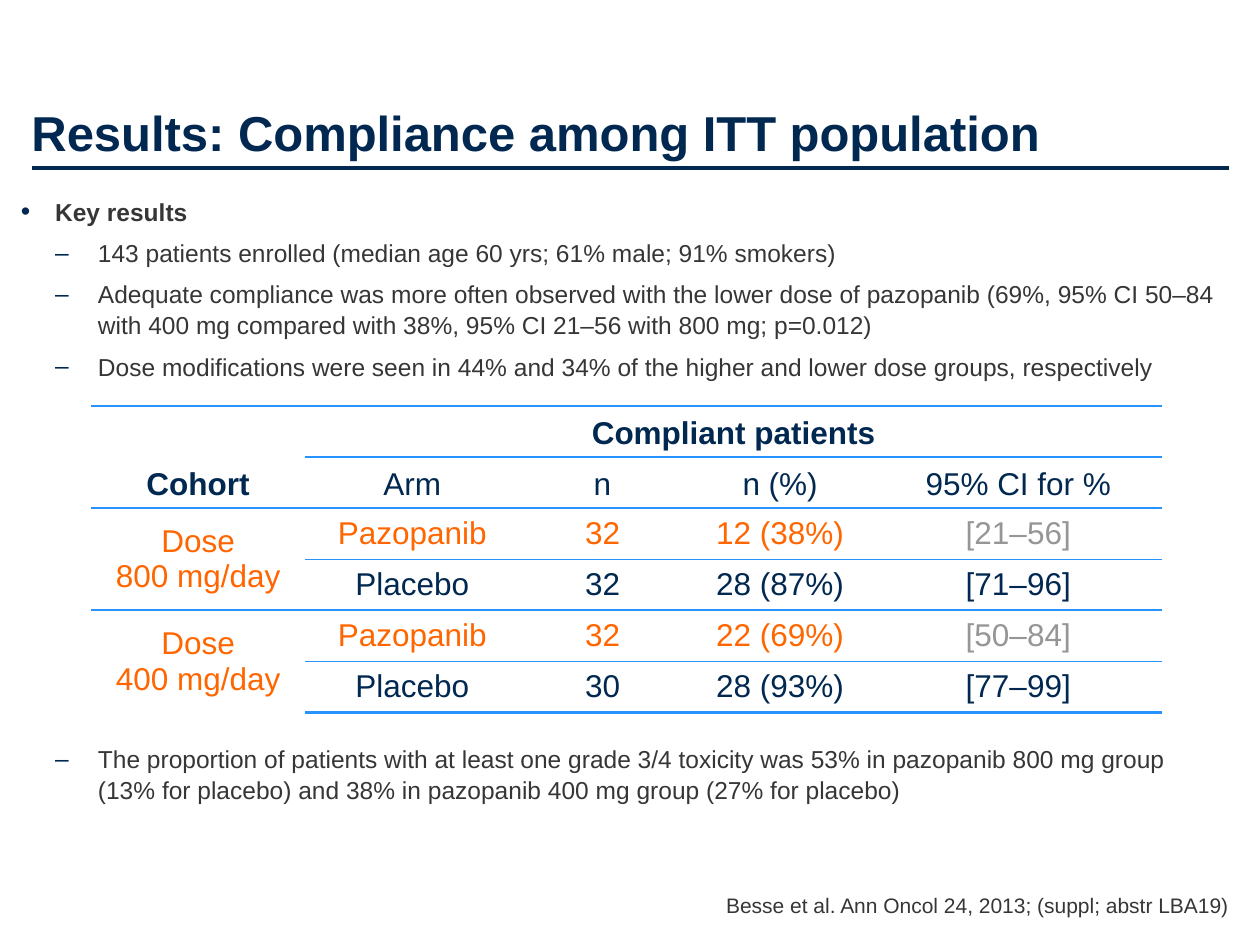
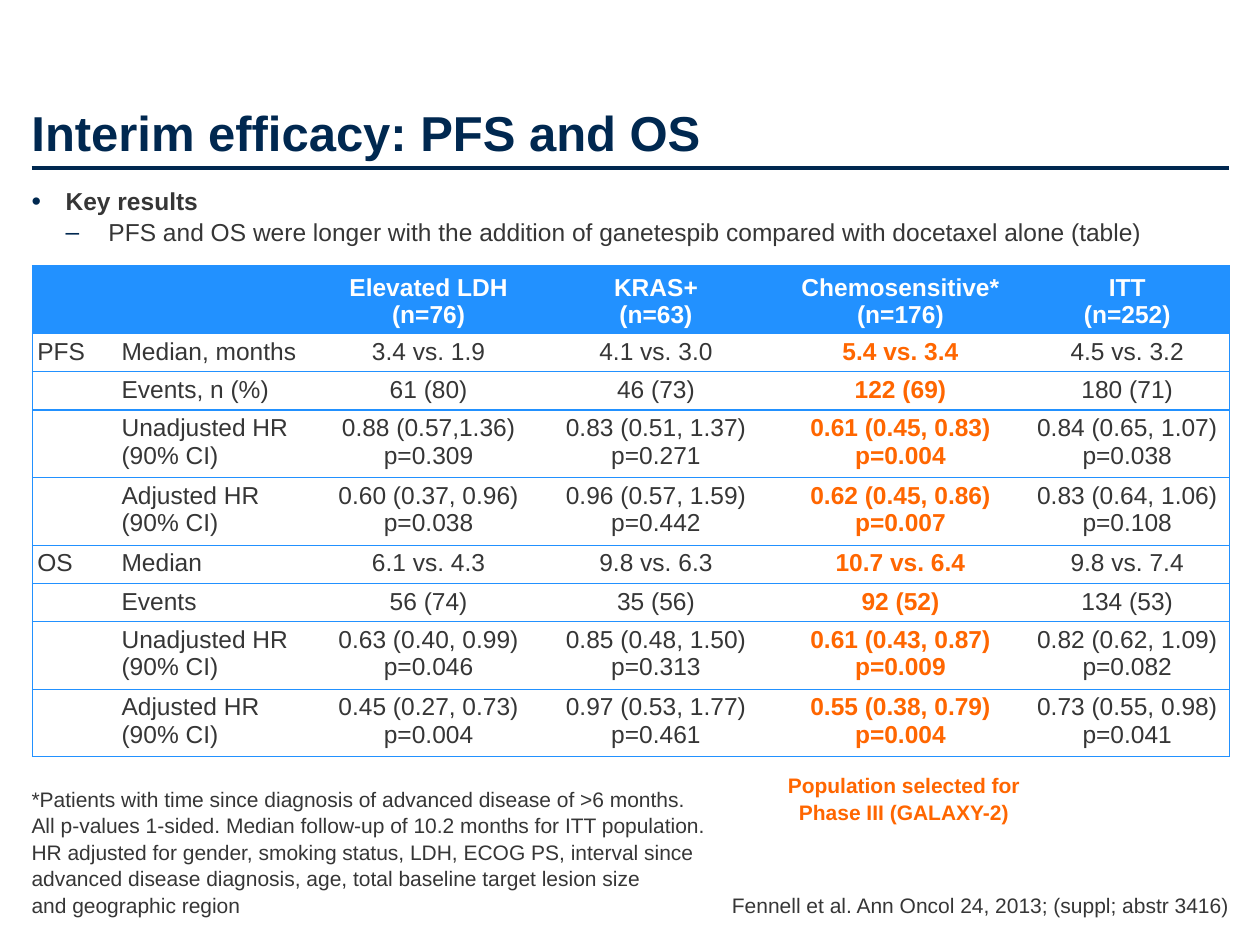
from lxml.etree import SubElement as Sub
from pptx import Presentation as Deck
from pptx.dml.color import RGBColor as Rgb
from pptx.enum.text import MSO_ANCHOR as Anchor, PP_ALIGN as Align
from pptx.oxml.ns import qn
from pptx.util import Pt

NAVY, GREY, ORANGE, PALE, WHITE = "002850", "363636", "FF6600", "969696", "FFFFFF"
SKY, BLUE = "2893FF", "2291FF"
PLAIN = "{2D5ABB26-0587-4C30-8999-92F81FD0307C}"


def hue(code):
    return Rgb.from_string(code)


class Page:
    base = {"name": "Arial", "size": Pt(14), "bold": False, "color": GREY}
    marks = [("•", 19.5, 19.5, True), ("–", 44, 24.5, False)]

    def __init__(self, deck, title, source):
        self.slide = deck.slides.add_slide(deck.slide_layouts[6])
        self.text((18, 18, 684, 74.2), [title], size=Pt(28), bold=True, color=NAVY)
        self.rule(18, 96, 702)
        self.text((382, 504, 320.4, 20.2), [source], Align.RIGHT, size=Pt(12))

    def rule(self, left, top, right):
        line = self.slide.shapes.add_connector(1, *map(Pt, (left, top, right, top)))
        line.line.color.rgb = hue(NAVY)
        line.line.width = Pt(2.25)
        Sub(line._element.spPr, qn("a:effectLst"))

    def put(self, para, text, align=Align.LEFT, **look):
        look = {**self.base, **look}
        para.alignment = align
        if not text:
            Sub(para._p, qn("a:endParaRPr"), sz=str(int(look["size"].pt * 100)))
            return
        run = para.add_run()
        run.text = text
        run.font.color.rgb = hue(look.pop("color"))
        for key, val in look.items():
            setattr(run.font, key, val)

    def frame(self, spot, anchor, pad=0):
        frame = self.slide.shapes.add_textbox(*map(Pt, spot)).text_frame
        form = {"word_wrap": True, "vertical_anchor": anchor, "margin_left": 0,
                "margin_right": 0, "margin_top": Pt(pad), "margin_bottom": Pt(pad)}
        for key, val in form.items():
            setattr(frame, key, val)
        return frame

    def fill(self, frame, lines, align, **look):
        for i, line in enumerate(lines):
            para = frame.add_paragraph() if i else frame.paragraphs[0]
            self.put(para, line, align, **look)

    def text(self, spot, lines, align=Align.LEFT, **look):
        frame = self.frame(spot, Anchor.BOTTOM)
        self.fill(frame, lines, align, **look)
        for para in frame.paragraphs:
            para.line_spacing = 1.05

    def list(self, spot, items, gap=0):
        frame = self.frame(spot, Anchor.TOP, 3.6)
        for i, (level, item) in enumerate(items):
            mark, left, hang, bold = self.marks[level]
            para = frame.add_paragraph() if i else frame.paragraphs[0]
            self.put(para, item, bold=bold)
            para.level = level
            para.line_spacing = 1.05
            para.space_after = Pt(gap)
            props = para._p.get_or_add_pPr()
            props.set("marL", str(Pt(left)))
            props.set("indent", str(-Pt(hang)))
            Sub(Sub(props, qn("a:buClr")), qn("a:srgbClr"), val=NAVY)
            Sub(props, qn("a:buSzPct"), val="100000" if level else "110000")
            Sub(props, qn("a:buFont"), typeface="Arial")
            Sub(props, qn("a:buChar"), char=mark)

    def edge(self, cell, color, sides):
        props = cell._tc.get_or_add_tcPr()
        for side in "LRTB":
            if sides.get(side):
                line = Sub(props, qn("a:ln" + side), w=str(Pt(sides[side])))
                Sub(Sub(line, qn("a:solidFill")), qn("a:srgbClr"), val=color)

    def table(self, left, top, cols, rows, data, style, sides, line, pad, spans=()):
        spot = map(Pt, (left, top, sum(cols), sum(rows)))
        table = self.slide.shapes.add_table(len(rows), len(cols), *spot).table
        table.first_row = table.horz_banding = False
        table._tbl.tblPr.find(qn("a:tableStyleId")).text = PLAIN
        for col, wide in zip(table.columns, cols):
            col.width = Pt(wide)
        for row, high in zip(table.rows, rows):
            row.height = Pt(high)
        for r, c, down, right in spans:
            table.cell(r, c).merge(table.cell(r + down, c + right))
        for r, row in enumerate(data):
            for c, text in enumerate(row):
                cell = table.cell(r, c)
                look = style(r, c)
                cell.vertical_anchor = look.pop("anchor")
                cell.margin_left = cell.margin_right = Pt(pad[0])
                cell.margin_top = cell.margin_bottom = Pt(pad[1])
                self.edge(cell, line, sides(r, c))
                back = look.pop("back", None)
                if back:
                    cell.fill.solid()
                    cell.fill.fore_color.rgb = hue(back)
                else:
                    cell.fill.background()
                self.fill(cell.text_frame, text.split("\n"), **look)


def doses(deck):
    page = Page(deck, "Results: Compliance among ITT population",
                "Besse et al. Ann Oncol 24, 2013; (suppl; abstr LBA19)")
    page.list((12, 108, 690, 115), [
        (0, "Key results"),
        (1, "143 patients enrolled (median age 60 yrs; 61% male; 91% smokers)"),
        (1, "Adequate compliance was more often observed with the lower dose of pazopanib "
            "(69%, 95% CI 50–84 with 400 mg compared with 38%, 95% CI 21–56 with 800 mg; "
            "p=0.012)"),
        (1, "Dose modifications were seen in 44% and 34% of the higher and lower dose "
            "groups, respectively"),
    ], 6)
    page.list((12, 421, 690, 55), [
        (1, "The proportion of patients with at least one grade 3/4 toxicity was 53% in "
            "pazopanib 800 mg group (13% for placebo) and 38% in pazopanib 400 mg group "
            "(27% for placebo)"),
    ], 6)
    data = [
        ["Cohort", "Compliant patients", "", "", ""],
        ["", "Arm", "n", "n (%)", "95% CI for %"],
        ["Dose\n800 mg/day", "Pazopanib", "32", "12 (38%)", "[21–56]"],
        ["", "Placebo", "32", "28 (87%)", "[71–96]"],
        ["Dose\n400 mg/day", "Pazopanib", "32", "22 (69%)", "[50–84]"],
        ["", "Placebo", "30", "28 (93%)", "[77–99]"],
    ]
    lines = [1.5, 1.5, 1.5, 0.25, 1.5, 0.25, 1.5]

    def style(r, c):
        drug = r in (2, 4)
        color = NAVY if not drug else PALE if c == 4 else ORANGE
        return {"anchor": Anchor.BOTTOM if r < 2 else Anchor.MIDDLE, "align": Align.CENTER,
                "size": Pt(18), "bold": r == 0, "color": color}

    def sides(r, c):
        inner = {1, 3, 5} if c == 0 else set()
        return {side: lines[n] for side, n in (("T", r), ("B", r + 1)) if n not in inner}

    page.table(52, 232, [122.4, 122.4, 95, 108, 164.2], [29.2] * 6, data, style, sides,
               SKY, (7.2, 3.6), [(0, 0, 1, 0), (0, 1, 0, 3), (2, 0, 1, 0), (4, 0, 1, 0)])


def trial(deck):
    page = Page(deck, "Interim efficacy: PFS and OS",
                "Fennell et al. Ann Oncol 24, 2013; (suppl; abstr 3416)")
    data = [
        ["", "", "Elevated LDH\n(n=76)", "KRAS+\n(n=63)", "Chemosensitive*\n(n=176)",
         "ITT\n(n=252)"],
        ["PFS", "Median, months", "3.4 vs. 1.9", "4.1 vs. 3.0", "5.4 vs. 3.4", "4.5 vs. 3.2"],
        ["", "Events, n (%)", "61 (80)", "46 (73)", "122 (69)", "180 (71)"],
        ["", "Unadjusted HR (90% CI)", "0.88 (0.57,1.36)\np=0.309",
         "0.83 (0.51, 1.37)\np=0.271", "0.61 (0.45, 0.83)\np=0.004",
         "0.84 (0.65, 1.07)\np=0.038"],
        ["", "Adjusted HR (90% CI)", "0.60 (0.37, 0.96)\np=0.038",
         "0.96 (0.57, 1.59)\np=0.442", "0.62 (0.45, 0.86)\np=0.007",
         "0.83 (0.64, 1.06)\np=0.108"],
        ["OS", "Median", "6.1 vs. 4.3", "9.8 vs. 6.3", "10.7 vs. 6.4", "9.8 vs. 7.4"],
        ["", "Events", "56 (74)", "35 (56)", "92 (52)", "134 (53)"],
        ["", "Unadjusted HR (90% CI)", "0.63 (0.40, 0.99)\np=0.046",
         "0.85 (0.48, 1.50)\np=0.313", "0.61 (0.43, 0.87)\np=0.009",
         "0.82 (0.62, 1.09)\np=0.082"],
        ["", "Adjusted HR (90% CI)", "0.45 (0.27, 0.73)\np=0.004",
         "0.97 (0.53, 1.77)\np=0.461", "0.55 (0.38, 0.79)\np=0.004",
         "0.73 (0.55, 0.98)\np=0.041"],
    ]
    tall, low = 37.2, 21.4

    def style(r, c):
        look = {"anchor": Anchor.TOP, "align": Align.CENTER if c > 1 else Align.LEFT}
        if r == 0:
            look.update(anchor=Anchor.BOTTOM, bold=True, color=WHITE, back=BLUE)
        elif c == 4:
            look.update(bold=True, color=ORANGE)
        return look

    def sides(r, c):
        return {"T": 0.75, "B": 0.75, "L": 0.75 * (c == 0), "R": 0.75 * (c == 5)}

    page.table(18.6, 152, [48.2, 116.6, 123.1, 136.8, 142.6, 116.6],
               [tall] + [low, low, tall, tall] * 2, data, style, sides, BLUE, (2.7, 2.5))
    page.list((18, 102.2, 684.7, 49.7), [
        (0, "Key results"),
        (1, "PFS and OS were longer with the addition of ganetespib compared with "
            "docetaxel alone (table)"),
    ])
    page.text((447.8, 442, 137.5, 29), ["Population selected for", "Phase III (GALAXY-2)"],
              Align.CENTER, size=Pt(12), bold=True, color=ORANGE)
    page.text((18, 451.4, 392, 72.8), [
        "*Patients with time since diagnosis of advanced disease of >6 months.",
        "All p-values 1-sided. Median follow-up of 10.2 months for ITT population.",
        "HR adjusted for gender, smoking status, LDH, ECOG PS, interval since",
        "advanced disease diagnosis, age, total baseline target lesion size",
        "and geographic region",
    ], size=Pt(12))


def main():
    deck = Deck()
    deck.slide_width, deck.slide_height = Pt(720), Pt(540)
    doses(deck)
    trial(deck)
    deck.save("out.pptx")


if __name__ == "__main__":
    main()
